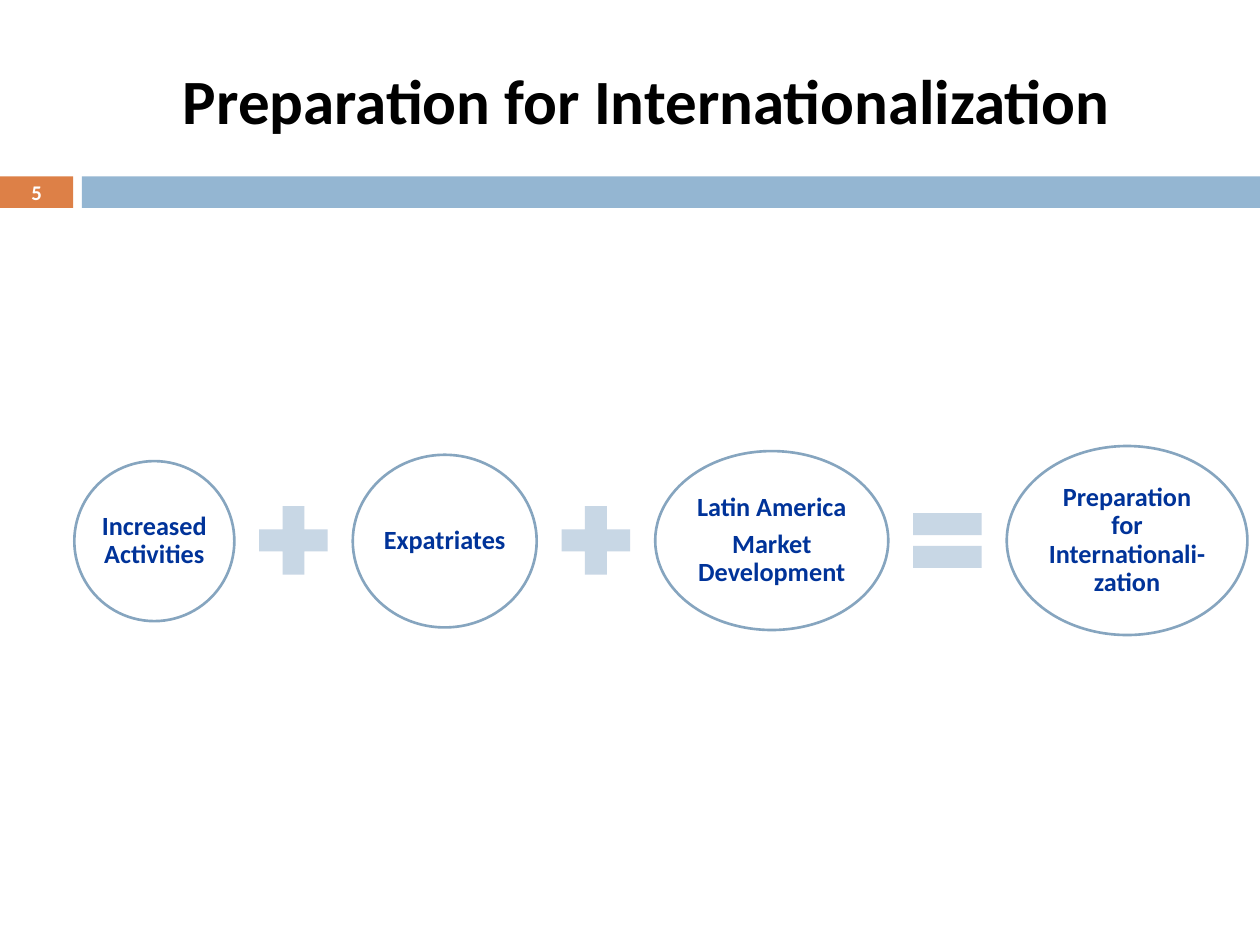
from dataclasses import dataclass

from pptx import Presentation
from pptx.dml.color import RGBColor
from pptx.enum.shapes import MSO_SHAPE as Shape
from pptx.enum.text import MSO_ANCHOR as Anchor, PP_ALIGN as Align
from pptx.util import Emu, Pt

PX = 9144  # EMU per px, 100 px to the inch


@dataclass(frozen=True)
class Theme:
    font: str = "Calibri"
    black: str = "000000"
    white: str = "FFFFFF"
    orange: str = "DD8047"
    blue: str = "94B6D2"
    pale_blue: str = "C8D7E5"
    outline: str = "86A5BF"
    navy: str = "003399"
    title_size: float = 36
    number_size: float = 11.9
    term_size: float = 15


class SlideBuilder:
    def __init__(self, slide, theme):
        self.s = slide
        self.theme = theme

    def shape(self, kind, box, fill, line=None):
        sp = self.s.shapes.add_shape(kind, *(Emu(v * PX) for v in box))
        sp.shadow.inherit = False
        sp.fill.solid()
        sp.fill.fore_color.rgb = RGBColor.from_string(fill)
        if line:
            sp.line.color.rgb = RGBColor.from_string(line)
            sp.line.width = Pt(1.5)
        else:
            sp.line.fill.background()
        return sp

    def add_text(self, sp, paragraphs, size, color, inset=0, spacing=1, after=0):
        tf = sp.text_frame
        tf.word_wrap = True
        tf.vertical_anchor = Anchor.MIDDLE
        tf.margin_left = tf.margin_right = Emu(inset * PX)
        tf.margin_top = tf.margin_bottom = Emu(inset * PX)
        for i, text in enumerate(paragraphs):
            p = tf.add_paragraph() if i else tf.paragraphs[0]
            p.alignment = Align.CENTER
            p.line_spacing = spacing
            p.space_after = Pt(after)
            r = p.add_run()
            r.text = text
            r.font.name = self.theme.font
            r.font.size = Pt(size)
            r.font.bold = True
            r.font.color.rgb = RGBColor.from_string(color)

    def title(self, box, text):
        sp = self.s.shapes.add_textbox(*(Emu(v * PX) for v in box))
        self.add_text(sp, [text], self.theme.title_size, self.theme.black)

    def number_tab(self, box, text):
        sp = self.shape(Shape.RECTANGLE, box, self.theme.orange)
        self.add_text(sp, [text], self.theme.number_size, self.theme.white)

    def bar(self, box):
        self.shape(Shape.RECTANGLE, box, self.theme.blue)

    def term(self, box, paragraphs):
        t = self.theme
        sp = self.shape(Shape.OVAL, box, t.white, t.outline)
        self.add_text(sp, paragraphs, t.term_size, t.navy,
                      inset=2, spacing=0.9, after=5.25)

    def operator(self, kind, box):
        self.shape(kind, box, self.theme.pale_blue)


def main():
    prs = Presentation()
    prs.slide_width, prs.slide_height = Emu(1000 * PX), Emu(750 * PX)
    slide = SlideBuilder(prs.slides.add_slide(prs.slide_layouts[6]), Theme())

    # Header: title above a numbered band
    slide.number_tab((0, 140, 58, 25), "5")
    slide.bar((65, 140, 935, 25))
    slide.title((67, 25, 892, 108), "Preparation for Internationalization")

    # Equation: each term with its size and the operator that follows it
    terms = [
        (127, 127, ["Increased Activities"], Shape.MATH_PLUS),
        (146, 137, ["Expatriates"], Shape.MATH_PLUS),
        (185, 142, ["Latin America", "Market Development"], Shape.MATH_EQUAL),
        (191, 150, ["Preparation for Internationali-zation"], None),
    ]
    x, middle, gap, side = 59, 429, 10, 74
    for width, height, paragraphs, operator in terms:
        slide.term((x, middle - height // 2, width, height), paragraphs)
        x += width + gap
        if operator:
            slide.operator(operator, (x, middle - side // 2, side, side))
            x += side + gap

    prs.save("out.pptx")


if __name__ == "__main__":
    main()
